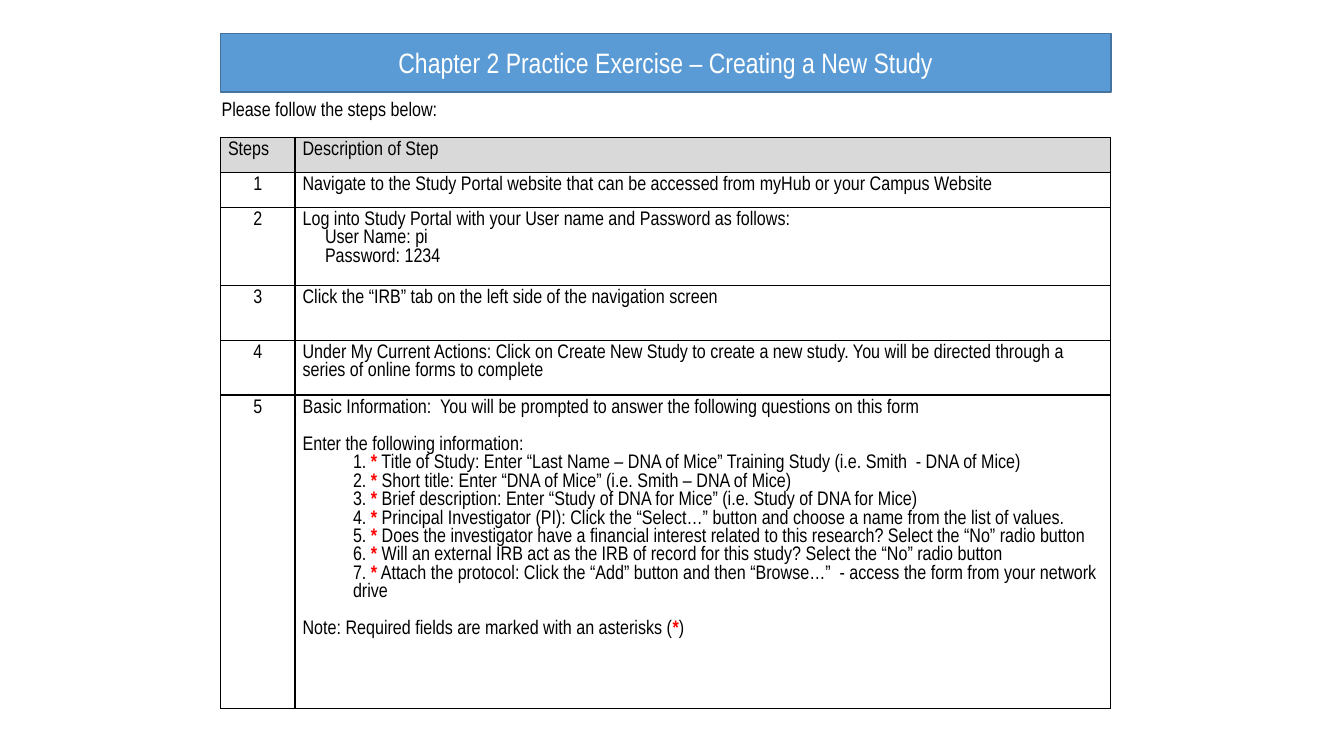
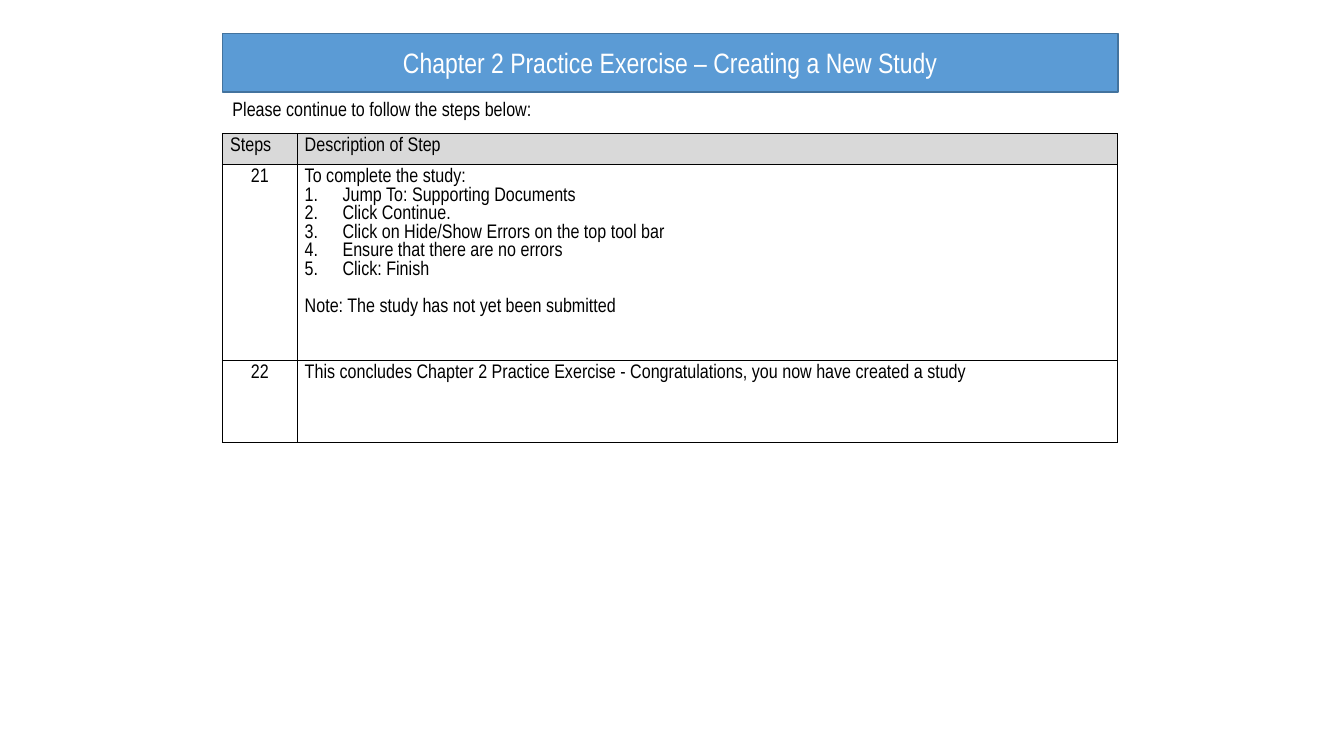
"""Build the two practice exercise slides on creating a new study."""
from dataclasses import dataclass

from lxml import etree
from pptx import Presentation
from pptx.dml.color import RGBColor
from pptx.enum.text import MSO_ANCHOR, MSO_AUTO_SIZE, PP_ALIGN
from pptx.oxml.ns import qn
from pptx.slide import Slide
from pptx.table import _Cell
from pptx.text.text import _Paragraph
from pptx.util import Pt

CENTER, LEFT = PP_ALIGN.CENTER, PP_ALIGN.LEFT
MIDDLE, TOP = MSO_ANCHOR.MIDDLE, MSO_ANCHOR.TOP
NO_AUTOFIT = MSO_AUTO_SIZE.NONE

FONT = "Arial Narrow"
BLACK, WHITE, RED = "000000", "FFFFFF", "FF0000"
BANNER_BLUE, BANNER_EDGE, HEADER_GREY = "5B9BD5", "43739E", "D9D9D9"

TITLE = "Chapter 2 Practice Exercise – Creating a New Study"
HEADINGS = ("Steps", "Description of Step")
TITLE_SIZE, TEXT_SIZE = 20, 14
BANNER_TOP, BANNER_HEIGHT = 23.8, 41.8
INTRO_TOP, INTRO_HEIGHT = 65.5, 24.5
NUMBER_WIDTH = 53.3
LINE_GAP = 13.2
REQUIRED_MARK = "*"


@dataclass(frozen=True)
class Line:
    """One paragraph of a step description."""

    text: str
    indent: float = 0
    hanging: float = 0
    space_before: float = 0


@dataclass(frozen=True)
class Step:
    """A numbered step with the height of its row."""

    number: int
    height: float
    lines: list[Line]


@dataclass(frozen=True)
class Exercise:
    """The content and placement of one slide."""

    left: float
    width: float
    intro: str
    intro_left: float
    table_top: float
    header_height: float
    steps: list[Step]


FORM_FIELDS = (
    "Title of Study: Enter “Last Name – DNA of Mice” Training Study (i.e. Smith  - DNA of Mice)",
    "Short title: Enter “DNA of Mice” (i.e. Smith – DNA of Mice)",
    "Brief description: Enter “Study of DNA for Mice” (i.e. Study of DNA for Mice)",
    "Principal Investigator (PI): Click the “Select…” button and choose a name from the list of values.",
    "Does the investigator have a financial interest related to this research? Select the “No” radio button",
    "Will an external IRB act as the IRB of record for this study? Select the “No” radio button",
    "Attach the protocol: Click the “Add” button and then “Browse…”  - access the form from your network drive",
)
COMPLETION_ACTIONS = (
    "Jump To: Supporting Documents",
    "Click Continue.",
    "Click on Hide/Show Errors on the top tool bar",
    "Ensure that there are no errors",
    "Click: Finish",
)

EXERCISES = (
    Exercise(157.5, 636, "Please follow the steps below:", 151.2, 98, 25, [
        Step(1, 25, [Line("Navigate to the Study Portal website that can be accessed from myHub or your Campus Website")]),
        Step(2, 55.8, [
            Line("Log into Study Portal with your User name and Password as follows:"),
            Line("User Name: pi", indent=16),
            Line("Password: 1234", indent=16),
        ]),
        Step(3, 39.2, [Line("Click the “IRB” tab on the left side of the navigation screen")]),
        Step(4, 39.2, [Line(
            "Under My Current Actions: Click on Create New Study to create a new study. "
            "You will be directed through a series of online forms to complete"
        )]),
        Step(5, 224, [
            Line("Basic Information:  You will be prompted to answer the following questions on this form"),
            Line("Enter the following information:", space_before=LINE_GAP),
            *(Line(f"{number}. {REQUIRED_MARK} {field}", indent=36)
              for number, field in enumerate(FORM_FIELDS, 1)),
            Line(f"Note: Required fields are marked with an asterisks ({REQUIRED_MARK})", space_before=LINE_GAP),
        ]),
    ]),
    Exercise(159, 639.5, "Please continue to follow the steps below:", 159, 95.5, 22, [
        Step(21, 140, [
            Line("To complete the study:"),
            *(Line(action, indent=27, hanging=27) for action in COMPLETION_ACTIONS),
            Line("Note: The study has not yet been submitted", space_before=LINE_GAP),
        ]),
        Step(22, 58.6, [Line("This concludes Chapter 2 Practice Exercise - Congratulations, you now have created a study")]),
    ]),
)


def rgb(color: str) -> RGBColor:
    """Turn a hex string into a colour."""
    return RGBColor.from_string(color)


def style(paragraph: _Paragraph, size: float = TEXT_SIZE, color: str = BLACK,
          align: PP_ALIGN = LEFT) -> None:
    """Set the font and alignment of a paragraph."""
    paragraph.alignment = align
    paragraph.font.name = FONT
    paragraph.font.size = Pt(size)
    paragraph.font.bold = False
    paragraph.font.color.rgb = rgb(color)


def write_line(paragraph: _Paragraph, line: Line, align: PP_ALIGN = LEFT) -> None:
    """Write one line, with its indent, numbering and red required marks."""
    properties = paragraph._p.get_or_add_pPr()
    if line.indent:
        properties.set("marL", str(Pt(line.indent)))
        properties.set("indent", str(Pt(-line.hanging)))
    if line.hanging:
        etree.SubElement(properties, qn("a:buAutoNum"), type="arabicPeriod")
    style(paragraph, align=align)
    if line.space_before:
        paragraph.space_before = Pt(line.space_before)
    before, mark, after = line.text.partition(REQUIRED_MARK)
    for text in filter(None, (before, mark, after)):
        run = paragraph.add_run()
        run.text = text
        if text == REQUIRED_MARK:
            run.font.bold = True
            run.font.color.rgb = rgb(RED)


def border_cell(cell: _Cell) -> None:
    """Draw a black one-point border on all sides of a cell."""
    properties = cell._tc.get_or_add_tcPr()
    for side in ("lnL", "lnR", "lnT", "lnB"):
        edge = etree.SubElement(properties, qn(f"a:{side}"), w=str(Pt(1)))
        fill = etree.SubElement(edge, qn("a:solidFill"))
        etree.SubElement(fill, qn("a:srgbClr"), val=BLACK)


def fill_cell(cell: _Cell, lines: list[Line], align: PP_ALIGN = LEFT, shade: str = "") -> None:
    """Format a table cell and write its lines."""
    border_cell(cell)
    if shade:
        cell.fill.solid()
        cell.fill.fore_color.rgb = rgb(shade)
    else:
        cell.fill.background()
    cell.margin_left = cell.margin_right = Pt(5.4)
    cell.margin_top = cell.margin_bottom = Pt(2.7)
    cell.vertical_anchor = TOP
    frame = cell.text_frame
    for index, line in enumerate(lines):
        paragraph = frame.add_paragraph() if index else frame.paragraphs[0]
        write_line(paragraph, line, align)


def add_banner(slide: Slide, exercise: Exercise) -> None:
    """Place the title as a blue banner above the table."""
    banner = slide.shapes.title
    banner.left, banner.top = Pt(exercise.left), Pt(BANNER_TOP)
    banner.width, banner.height = Pt(exercise.width), Pt(BANNER_HEIGHT)
    banner.fill.solid()
    banner.fill.fore_color.rgb = rgb(BANNER_BLUE)
    banner.line.color.rgb = rgb(BANNER_EDGE)
    banner.line.width = Pt(1)
    frame = banner.text_frame
    frame.text = TITLE
    frame.auto_size = NO_AUTOFIT
    frame.vertical_anchor = MIDDLE
    style(frame.paragraphs[0], TITLE_SIZE, WHITE, CENTER)


def add_intro(slide: Slide, exercise: Exercise) -> None:
    """Add the sentence that introduces the table."""
    intro = slide.shapes.add_textbox(
        Pt(exercise.intro_left), Pt(INTRO_TOP), Pt(520), Pt(INTRO_HEIGHT))
    intro.text_frame.word_wrap = True
    write_line(intro.text_frame.paragraphs[0], Line(exercise.intro))


def add_steps(slide: Slide, exercise: Exercise) -> None:
    """Add the table of steps."""
    heights = [exercise.header_height, *(step.height for step in exercise.steps)]
    table = slide.shapes.add_table(
        len(heights), len(HEADINGS), Pt(exercise.left), Pt(exercise.table_top),
        Pt(exercise.width), Pt(sum(heights))).table
    table.first_row = table.horz_banding = False
    for column, width in zip(table.columns, (NUMBER_WIDTH, exercise.width - NUMBER_WIDTH)):
        column.width = Pt(width)
    for row, height in zip(table.rows, heights):
        row.height = Pt(height)
    for column, heading in enumerate(HEADINGS):
        fill_cell(table.cell(0, column), [Line(heading)], shade=HEADER_GREY)
    for row, step in enumerate(exercise.steps, 1):
        fill_cell(table.cell(row, 0), [Line(str(step.number))], CENTER)
        fill_cell(table.cell(row, 1), step.lines)


def main() -> None:
    """Build and save the presentation."""
    deck = Presentation()
    deck.slide_width, deck.slide_height = Pt(960), Pt(540)
    title_only = deck.slide_layouts[5]
    for exercise in EXERCISES:
        slide = deck.slides.add_slide(title_only)
        add_banner(slide, exercise)
        add_intro(slide, exercise)
        add_steps(slide, exercise)
    deck.save("out.pptx")


if __name__ == "__main__":
    main()
